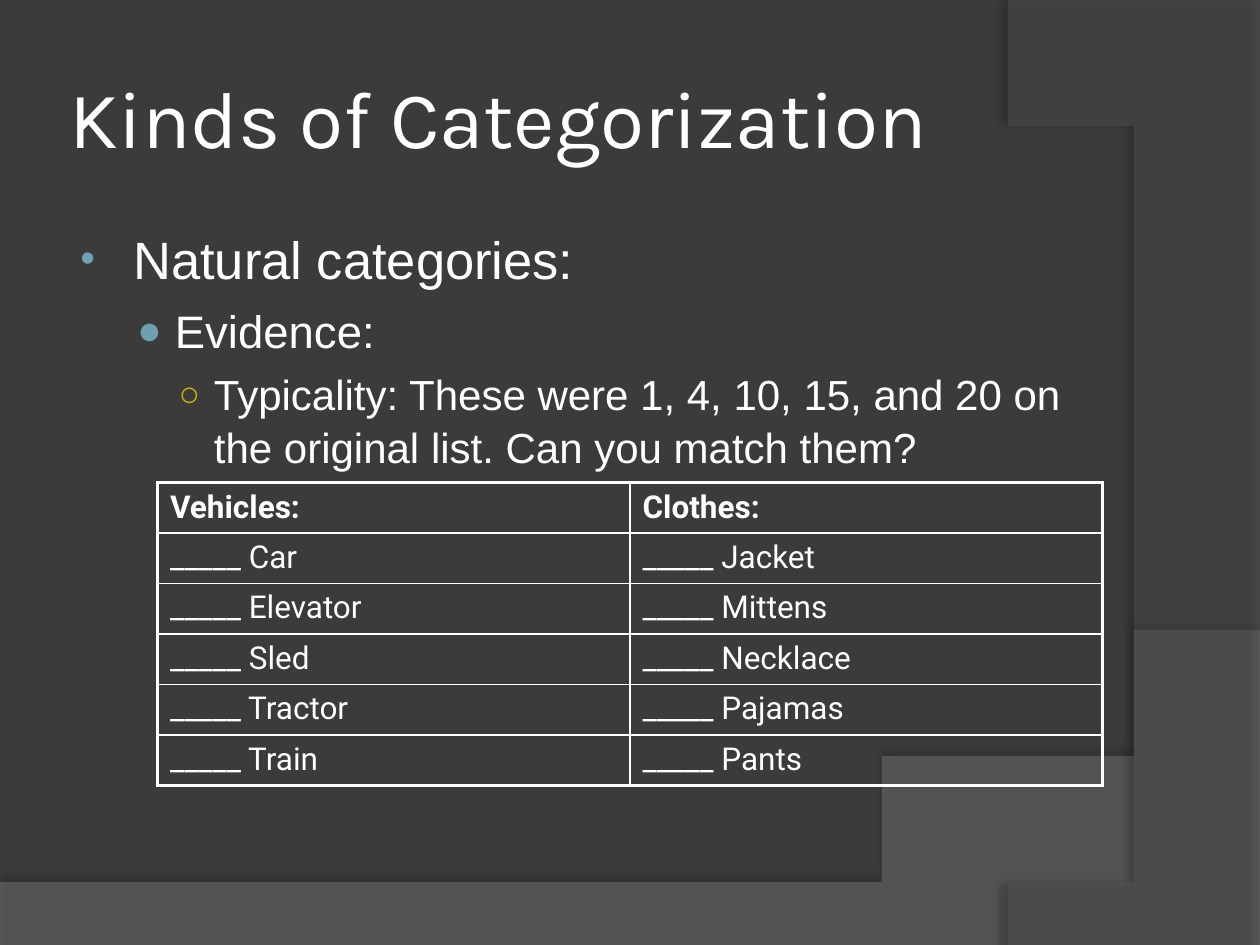
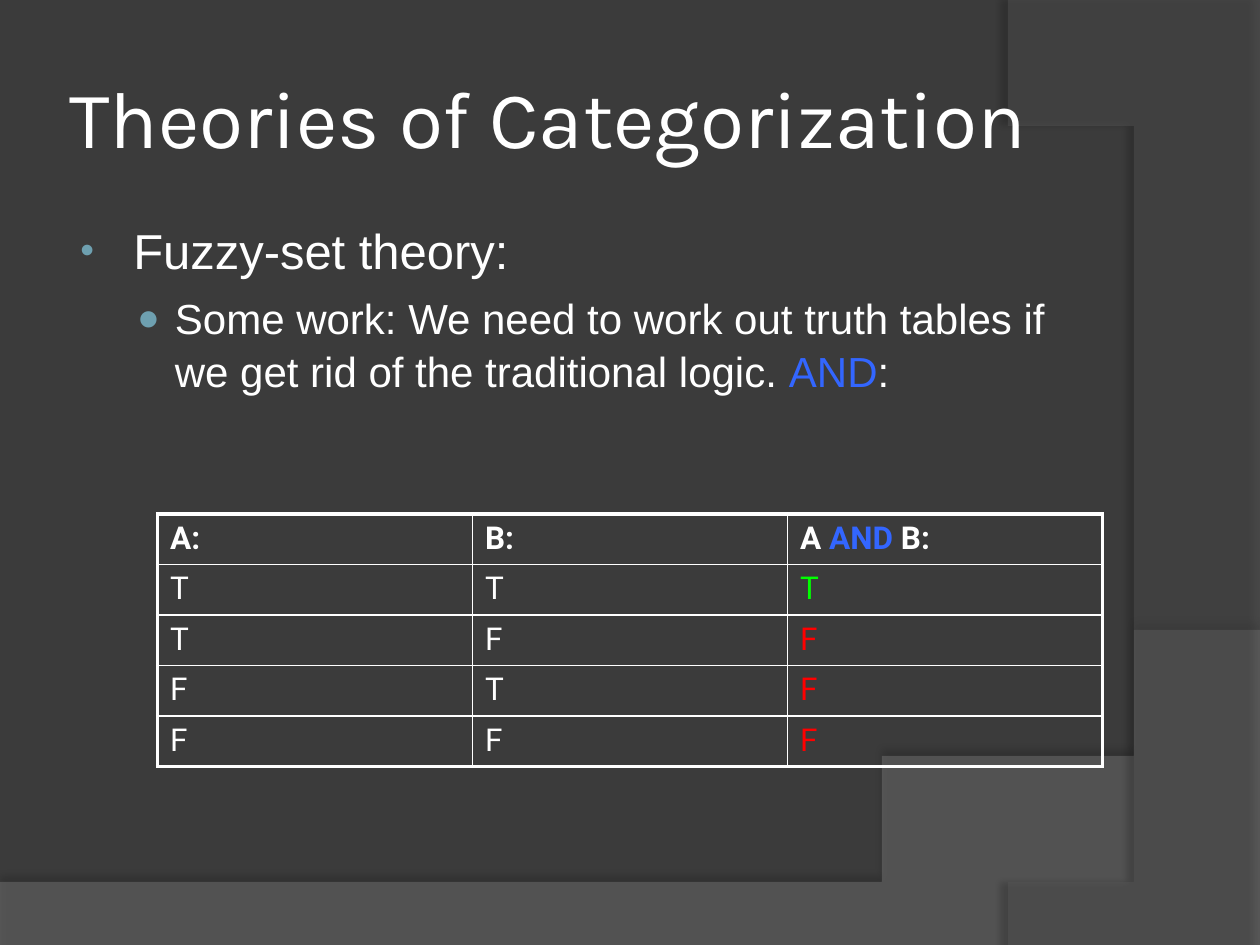
from lxml import etree
from pptx import Presentation
from pptx.dml.color import RGBColor
from pptx.enum.text import MSO_ANCHOR
from pptx.oxml.ns import qn
from pptx.util import Inches, Pt

MIDDLE = MSO_ANCHOR.MIDDLE
BACKDROP = RGBColor(0x3B, 0x3B, 0x3B)
WAVE_GREY = RGBColor(0x7C, 0x7C, 0x7C)
ARC_GREY = RGBColor(0x59, 0x59, 0x59)
BLACK = RGBColor(0, 0, 0)
WHITE = RGBColor(0xFF, 0xFF, 0xFF)
TEAL = RGBColor(0x6E, 0xA0, 0xB0)
GOLD = RGBColor(0xCC, 0xAF, 0x0A)
BLUE = RGBColor(0x33, 0x66, 0xFF)
GREEN = RGBColor(0, 0xFF, 0)
RED = RGBColor(0xFF, 0, 0)

THIN, THICK = 1, 2.25
CURVE_STEPS = 40

# outline before the curve, the curve's four control points, colour, alpha, shadow
BANDS = [
    ([(0, 7.5), (10, 7.5)], [(10, 5.2), (5.59, 7.29), (3.91, 7.19), (0, 7.05)],
     WAVE_GREY, 45, (35, 3.5, 270)),
    ([(10, 0.02), (10, 7.5)], [(8.21, 7.5), (9.35, 6.19), (10.18, 3), (8, 0)],
     ARC_GREY, 40, (45, 4, 180)),
]

# bullet, colour, size in percent, left indent, hanging indent, space before
LEVELS = [
    ("•", TEAL, 80, 0.46, 0.42, 3),
    ("●", TEAL, 90, 0.79, 0.3, 6),
    ("○", GOLD, 85, 1.1, 0.28, 5),
]

LESSONS = [
    {
        "title": "Kinds of Categorization",
        "points": [
            (30, 1, [("Natural categories:", WHITE)]),
            (26, 1.05, [("Evidence:", WHITE)]),
            (24, 1.05, [("Typicality: These were 1, 4, 10, 15, and 20 on the original list. "
                         "Can you match them?", WHITE)]),
        ],
        "table_top": 3.83,
        "row_height": 0.4,
        "rows": [
            ["Vehicles:", "Clothes:"],
            ["_____ Car", "_____ Jacket"],
            ["_____ Elevator", "_____ Mittens"],
            ["_____ Sled", "_____ Necklace"],
            ["_____ Tractor", "_____ Pajamas"],
            ["_____ Train", "_____ Pants"],
        ],
    },
    {
        "title": "Theories of Categorization",
        "points": [
            (28, 0.9, [("Fuzzy-set theory:", WHITE)]),
            (24, 1.05, [("Some work: We need to work out truth tables if we get rid of "
                         "the traditional logic. ", WHITE), ("AND", BLUE), (":", WHITE)]),
        ],
        "table_top": 4.08,
        "row_height": 0.39,
        "rows": [
            ["A:", "B:", [("A ", WHITE), ("AND ", BLUE), ("B:", WHITE)]],
            ["T", "T", [("T", GREEN)]],
            ["T", "F", [("F", RED)]],
            ["F", "T", [("F", RED)]],
            ["F", "F", [("F", RED)]],
        ],
    },
]


def add_run(paragraph, text, font_name, size, color, bold=False):
    run = paragraph.add_run()
    run.text = text
    run.font.name = font_name
    run.font.size = Pt(size)
    run.font.bold = bold
    run.font.color.rgb = color


def add_node(parent, tag, **attributes):
    node = etree.SubElement(parent, qn(tag))
    for key, value in attributes.items():
        node.set(key, str(value))
    return node


prs = Presentation()
prs.slide_width = Inches(10)
prs.slide_height = Inches(7.5)
blank = prs.slide_layouts[6]
backdrop = prs.slide_master.background.fill
backdrop.solid()
backdrop.fore_color.rgb = BACKDROP

for lesson in LESSONS:
    slide = prs.slides.add_slide(blank)

    for corners, controls, color, alpha, (shade, distance, angle) in BANDS:
        outline = list(corners)
        for step in range(CURVE_STEPS + 1):
            t = step / CURVE_STEPS
            weights = ((1 - t) ** 3, 3 * t * (1 - t) ** 2, 3 * t * t * (1 - t), t ** 3)
            outline.append(tuple(sum(w * c[axis] for w, c in zip(weights, controls))
                                 for axis in (0, 1)))
        builder = slide.shapes.build_freeform(*outline[0], scale=Inches(1))
        builder.add_line_segments(outline[1:], close=True)
        band = builder.convert_to_shape()
        band.fill.solid()
        band.fill.fore_color.rgb = color
        band.line.fill.background()
        band.shadow.inherit = False
        properties = band.element.spPr
        add_node(properties.find(qn("a:solidFill"))[0], "a:alpha", val=alpha * 1000)
        shadow = add_node(properties.find(qn("a:effectLst")), "a:outerShdw",
                          blurRad=Pt(4), dist=Pt(distance), dir=angle * 60000,
                          algn="ctr", rotWithShape=0)
        shadow_color = add_node(shadow, "a:srgbClr", val=BLACK)
        add_node(shadow_color, "a:alpha", val=shade * 1000)

    title = slide.shapes.add_textbox(Inches(0.5), Inches(0.3), Inches(8.17), Inches(1.25)).text_frame
    title.word_wrap = True
    title.vertical_anchor = MIDDLE
    title.margin_left = title.margin_right = Inches(0.05)
    add_run(title.paragraphs[0], lesson["title"], "Karla", 46, WHITE)

    body = slide.shapes.add_textbox(Inches(0.5), Inches(1.75), Inches(8.17), Inches(4.95)).text_frame
    body.word_wrap = True
    for level, (size, spacing, runs) in enumerate(lesson["points"]):
        bullet, bullet_color, percent, indent, hanging, before = LEVELS[level]
        point = body.add_paragraph() if level else body.paragraphs[0]
        point.level = level
        point.line_spacing = spacing
        point.space_before = Pt(before)
        for text, color in runs:
            add_run(point, text, "Arial", size, color)
        layout = point._p.get_or_add_pPr()
        layout.set("marL", str(Inches(indent)))
        layout.set("indent", str(-Inches(hanging)))
        add_node(add_node(layout, "a:buClr"), "a:srgbClr", val=bullet_color)
        add_node(layout, "a:buSzPct", val=percent * 1000)
        add_node(layout, "a:buFont", typeface="Arial")
        add_node(layout, "a:buChar", char=bullet)

    rows = lesson["rows"]
    last_row, last_column = len(rows) - 1, len(rows[0]) - 1
    table = slide.shapes.add_table(
        len(rows), len(rows[0]), Inches(1.25), Inches(lesson["table_top"]),
        Inches(7.5), Inches(lesson["row_height"] * len(rows))).table
    table.horz_banding = False
    table.first_row = False
    for r, row in enumerate(rows):
        for c, content in enumerate(row):
            cell = table.cell(r, c)
            runs = [(content, WHITE)] if isinstance(content, str) else content
            for text, color in runs:
                add_run(cell.text_frame.paragraphs[0], text, "Roboto", 18, color, bold=r == 0)
            edges = {"a:lnL": c == 0, "a:lnR": c == last_column,
                     "a:lnT": r == 0, "a:lnB": r == last_row}
            for tag, outer in edges.items():
                border = add_node(cell._tc.get_or_add_tcPr(), tag, w=Pt(THICK if outer else THIN))
                add_node(add_node(border, "a:solidFill"), "a:srgbClr", val=WHITE)
            cell.fill.background()

prs.save("out.pptx")
